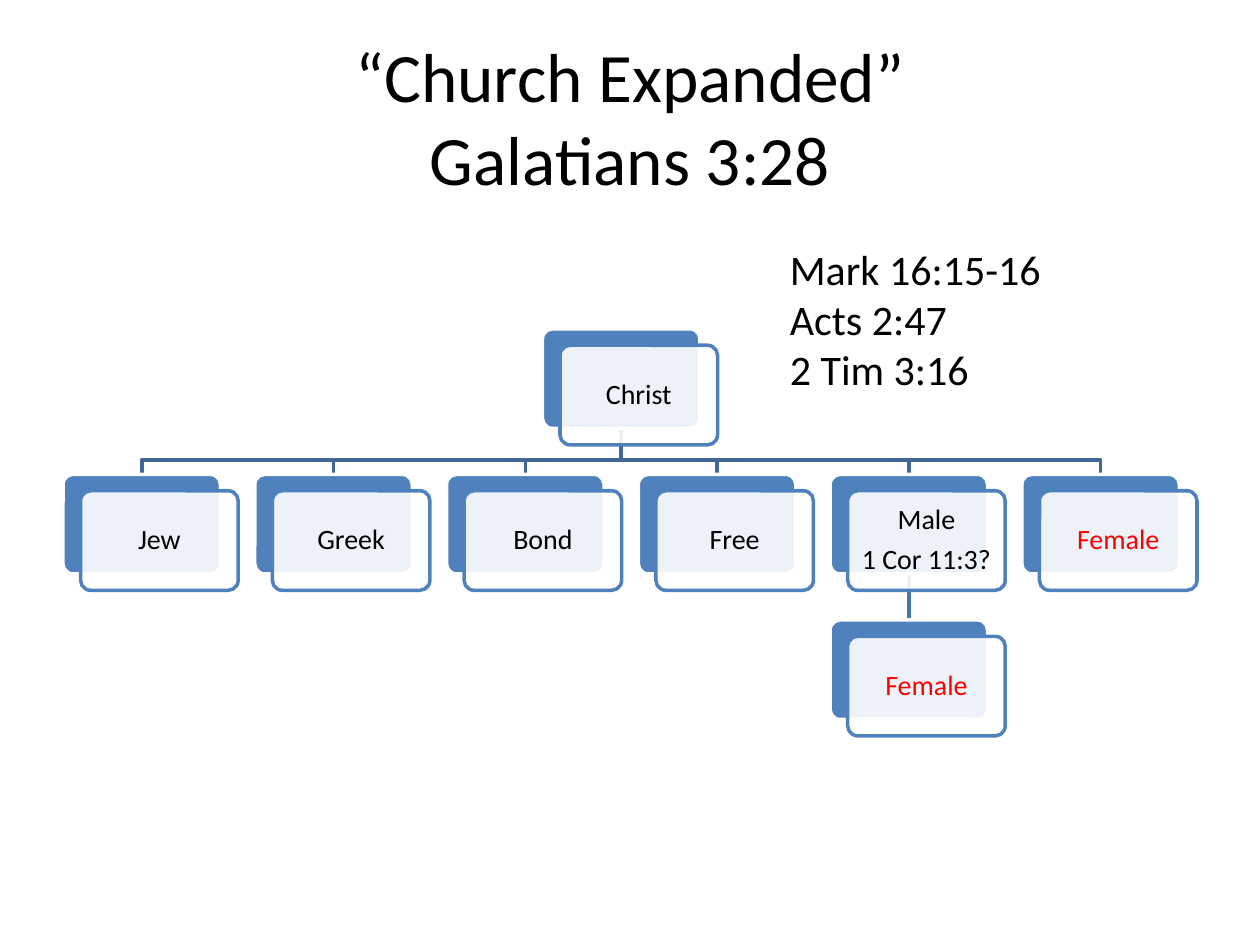
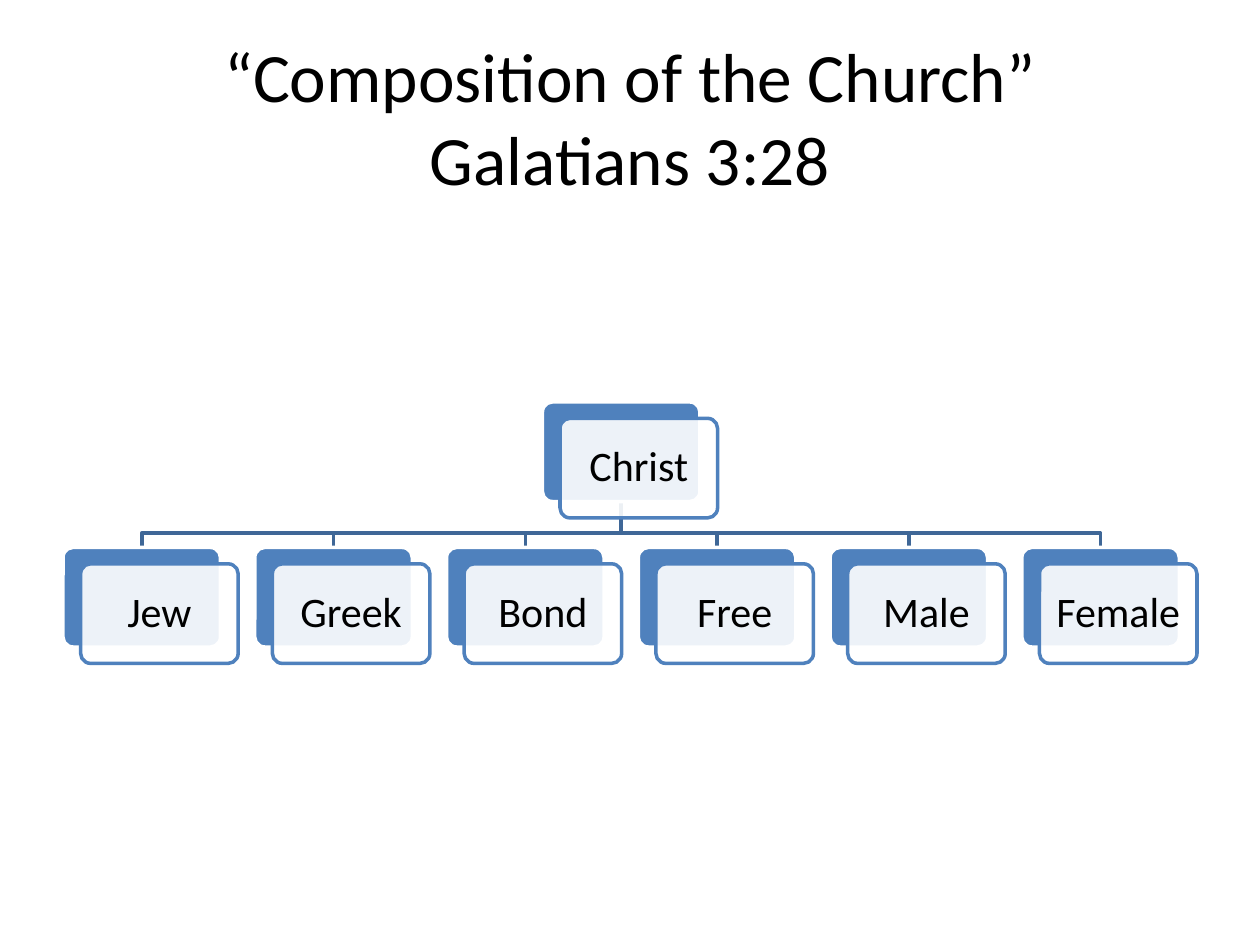
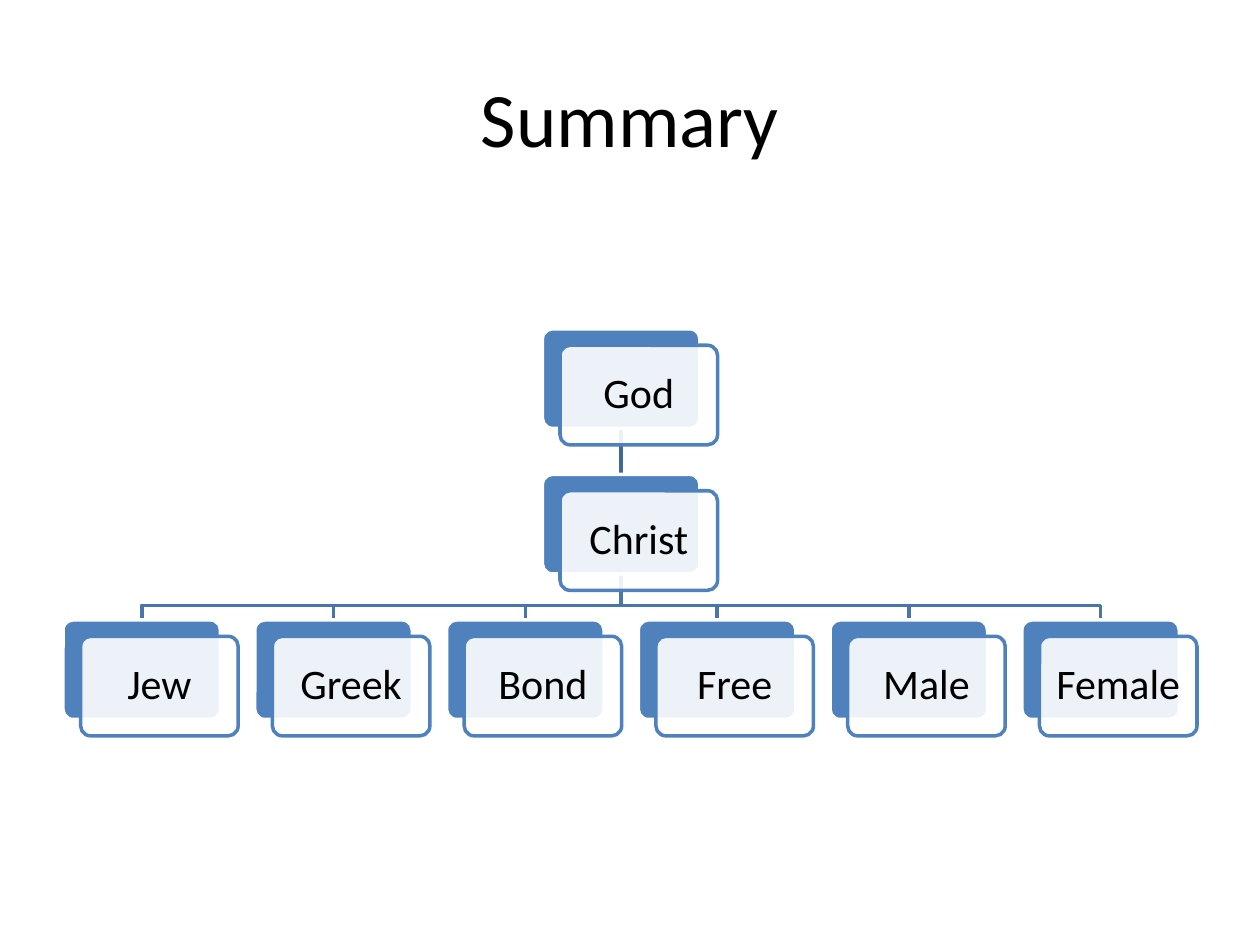
"""Build three slides that chart the members of the church under Christ."""
from lxml.etree import SubElement
from pptx import Presentation
from pptx.dml.color import RGBColor
from pptx.enum.shapes import MSO_CONNECTOR, MSO_SHAPE
from pptx.enum.text import MSO_ANCHOR, PP_ALIGN
from pptx.oxml.ns import qn
from pptx.util import Inches, Pt

COLORS = {
    "text": "000000", "accent": "FF0000", "card": "4F81BD", "paper": "FFFFFF",
    "first_link": "3F6797", "second_link": "4875AC",
}
FONT = "Calibri"
LEFT, COLUMN_STEP = 0.5, (8.11 - 0.5) / 5
ROW_STEP = (4.92 - 2.61) / 2
CARD_W, CARD_H = 1.25, 0.79
OFFSET_X, OFFSET_Y = 0.14, 0.13
CARD_INSET = 0.06
BEND = 0.25
MIDDLE = 2.5


def write(frame, paragraphs, size, color="text", align=PP_ALIGN.LEFT):
    frame.word_wrap = True
    for index, text in enumerate(paragraphs):
        paragraph = frame.paragraphs[0] if index == 0 else frame.add_paragraph()
        paragraph.alignment = align
        for part_index, part in enumerate(text.split("\n")):
            if part_index:
                paragraph.add_line_break()
            run = paragraph.add_run()
            run.text = part
            run.font.name = FONT
            run.font.size = Pt(size)
            run.font.color.rgb = RGBColor.from_string(COLORS[color])


def add_card(slide, left, top, fill, outline):
    card = slide.shapes.add_shape(MSO_SHAPE.ROUNDED_RECTANGLE, Inches(left), Inches(top),
                                  Inches(CARD_W), Inches(CARD_H))
    card.adjustments[0] = 0.1
    card.shadow.inherit = False
    card.fill.solid()
    card.fill.fore_color.rgb = RGBColor.from_string(COLORS[fill])
    card.line.color.rgb = RGBColor.from_string(COLORS[outline])
    card.line.width = Pt(2)
    return card


members = ["Jew", "Greek", "Bond", "Free", "Male", "Female"]
composition = [(["Christ"], MIDDLE, 0, None, "text")]
composition += [([name], column, 1, 0, "text") for column, name in enumerate(members)]
expanded = composition[:5] + [
    (["Male", "1 Cor 11:3?"], 4, 1, 0, "text"),
    (["Female"], 5, 1, 0, "accent"),
    (["Female"], 4, 2, 5, "accent"),
]
summary = [(["God"], MIDDLE, 0, None, "text"), (["Christ"], MIDDLE, 1, 0, "text")]
summary += [([name], column, 2, 1, "text") for column, name in enumerate(members)]

charts = [
    ("“Church Expanded”\nGalatians 3:28", 39.6, 2.61, 16, expanded),
    ("“Composition of the Church”\nGalatians 3:28", 39.6, 3.19, 24, composition),
    ("Summary", 44, 2.61, 24, summary),
]

prs = Presentation()
prs.slide_width, prs.slide_height = Inches(10), Inches(7.5)

for title, title_size, chart_top, label_size, people in charts:
    slide = prs.slides.add_slide(prs.slide_layouts[6])
    heading = slide.shapes.add_textbox(Inches(0.5), Inches(0.3), Inches(9), Inches(1.25))
    heading.text_frame.vertical_anchor = MSO_ANCHOR.MIDDLE
    write(heading.text_frame, [title], title_size, align=PP_ALIGN.CENTER)

    corners = [(LEFT + column * COLUMN_STEP, chart_top + row * ROW_STEP)
               for _, column, row, _, _ in people]

    for (left, top), (_, _, row, parent, _) in zip(corners, people):
        if parent is None:
            continue
        start_x = Inches(corners[parent][0] + CARD_W / 2)
        start_y = Inches(corners[parent][1] + CARD_H)
        end_x, end_y = Inches(left + CARD_W / 2), Inches(top)
        if start_x == end_x:
            link = slide.shapes.add_connector(MSO_CONNECTOR.STRAIGHT, start_x, start_y, end_x, end_y)
            SubElement(link._element.spPr, qn("a:effectLst"))
        else:
            bend_y = start_y + Inches(BEND)
            elbow = slide.shapes.build_freeform(start_x, start_y)
            elbow.add_line_segments([(start_x, bend_y), (end_x, bend_y), (end_x, end_y)], close=False)
            link = elbow.convert_to_shape()
            link.fill.background()
            link.shadow.inherit = False
        link.line.color.rgb = RGBColor.from_string(COLORS["first_link" if row == 1 else "second_link"])
        link.line.width = Pt(2)

    for (left, top), (label, _, _, _, color) in zip(corners, people):
        add_card(slide, left, top, "card", "paper")
        front = add_card(slide, left + OFFSET_X, top + OFFSET_Y, "paper", "card")
        front_color = front._element.spPr.find(qn("a:solidFill"))[0]
        SubElement(front_color, qn("a:alpha"), val="90000")
        frame = front.text_frame
        frame.margin_left = frame.margin_right = Inches(CARD_INSET)
        frame.margin_top = frame.margin_bottom = Inches(CARD_INSET)
        frame.vertical_anchor = MSO_ANCHOR.MIDDLE
        write(frame, label, label_size, color, PP_ALIGN.CENTER)
        for paragraph in frame.paragraphs:
            paragraph.line_spacing = 0.9
            paragraph.space_after = Pt(label_size * 0.35)

verses = prs.slides[0].shapes.add_textbox(Inches(6.17), Inches(1.88), Inches(2.92), Inches(1.31))
write(verses.text_frame, ["Mark 16:15-16", "Acts 2:47", "2 Tim 3:16"], 24)

prs.save("out.pptx")
